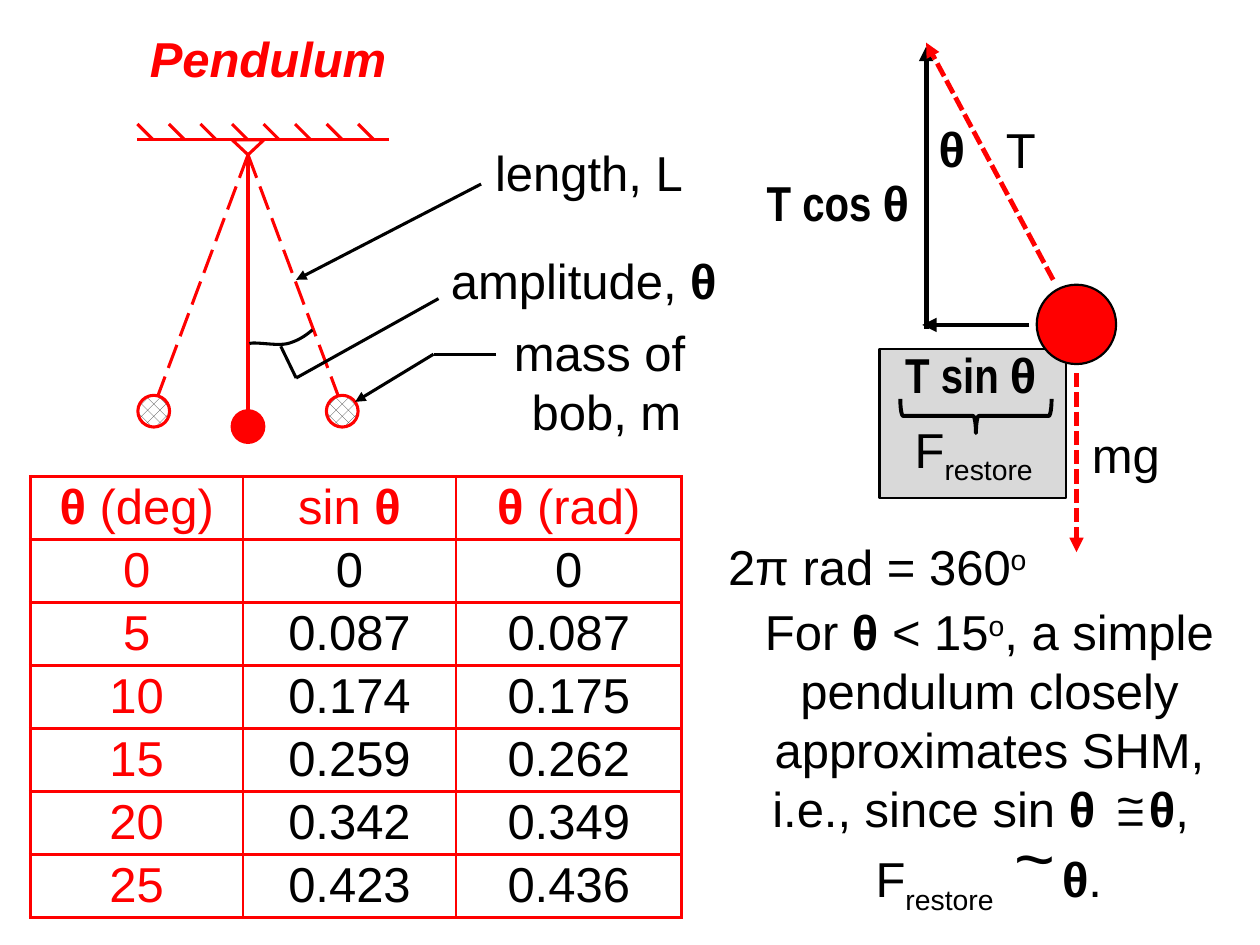
import pptx
import pptx.util
import pptx.dml.color
import pptx.enum.dml
import pptx.enum.shapes
import pptx.enum.text
import pptx.oxml
import pptx.oxml.ns

Cm, Pt = pptx.util.Cm, pptx.util.Pt
RGB = pptx.dml.color.RGBColor
SHAPE = pptx.enum.shapes.MSO_SHAPE
DASH = pptx.enum.dml.MSO_LINE
ALIGN = pptx.enum.text.PP_ALIGN
RED, BLACK, WHITE = RGB(255, 0, 0), RGB(0, 0, 0), RGB(255, 255, 255)
GREY, DARK = RGB(0xD9, 0xD9, 0xD9), RGB(0x33, 0x33, 0x33)
THIN, MEDIUM, THICK, BRACE = 1.75, 1.25, 2.75, 2.25
NS = pptx.oxml.ns.nsdecls("a")
THETA = ("θ", {"bold": True})
SUB, SUP = {"baseline": -25000}, {"baseline": 30000}
NARROW = {"bold": True, "name": "Arial Narrow"}


class Sketch:
    """Holds the text style and the slide being drawn, with lengths in centimetres."""

    def __init__(self, slide):
        self.slide = slide
        self.base = {"name": "Arial", "size": Pt(28), "bold": False}

    def add_runs(self, p, runs, color):
        for run in runs:
            text, extra = (run, {}) if isinstance(run, str) else run
            fmt = {**self.base, **extra}
            baseline = fmt.pop("baseline", None)
            r = p.add_run()
            r.text = text
            r.font.color.rgb = color
            for key, value in fmt.items():
                setattr(r.font, key, value)
            if baseline:
                r._r.get_or_add_rPr().set("baseline", str(baseline))

    def text(self, x, y, w, paras, h=1.45, color=BLACK, align=ALIGN.CENTER, wrap=False):
        sp = self.slide.shapes.add_textbox(Cm(x), Cm(y), Cm(w), Cm(h))
        tf = sp.text_frame
        tf.word_wrap = wrap
        tf.auto_size = pptx.enum.text.MSO_AUTO_SIZE.SHAPE_TO_FIT_TEXT
        for i, runs in enumerate(paras):
            p = tf.add_paragraph() if i else tf.paragraphs[0]
            p.alignment = align
            self.add_runs(p, runs, color)
        return tf

    def tabs(self, p, *stops):
        p.alignment = ALIGN.LEFT
        tabs = "".join(f'<a:tab pos="{Cm(s)}" algn="l"/>' for s in stops)
        p._p.get_or_add_pPr().append(pptx.oxml.parse_xml(f"<a:tabLst {NS}>{tabs}</a:tabLst>"))

    def line(self, x1, y1, x2, y2, color=BLACK, width=THIN, dash=None, arrow=False):
        sp = self.slide.shapes.add_connector(
            pptx.enum.shapes.MSO_CONNECTOR.STRAIGHT, Cm(x1), Cm(y1), Cm(x2), Cm(y2))
        values = {"width": Pt(width), "dash_style": dash}
        sp.line.color.rgb = color
        for key, value in values.items():
            setattr(sp.line, key, value)
        if arrow:
            sp.line._get_or_add_ln().append(
                pptx.oxml.parse_xml(f'<a:tailEnd {NS} type="triangle"/>'))
        sp._element.spPr.append(pptx.oxml.parse_xml(f"<a:effectLst {NS}/>"))

    def finish(self, sp, fill, color, width):
        sp.shadow.inherit = False
        sp.line.color.rgb = color
        sp.line.width = Pt(width)
        if fill is None:
            sp.fill.background()
        else:
            sp.fill.solid()
            sp.fill.fore_color.rgb = fill
        return sp

    def shape(self, kind, x, y, w, h, fill=None, color=RED, width=THIN, rotation=0):
        sp = self.slide.shapes.add_shape(kind, Cm(x), Cm(y), Cm(w), Cm(h))
        sp.rotation = rotation
        return self.finish(sp, fill, color, width)

    def circle(self, cx, cy, d, **style):
        return self.shape(SHAPE.OVAL, cx - d / 2, cy - d / 2, d, d, **style)

    def hatched(self, cx, cy, d):
        fill = self.circle(cx, cy, d).fill
        fill.patterned()
        fill.pattern = pptx.enum.dml.MSO_PATTERN.PERCENT_30
        fill.fore_color.rgb, fill.back_color.rgb = DARK, WHITE

    def curve(self, *beziers, steps=10):
        pts = [beziers[0][0]]
        for a, b, c, d in beziers:
            for t in (i / steps for i in range(1, steps + 1)):
                u = 1 - t
                pts.append([u**3 * m + 3 * u * u * t * n + 3 * u * t * t * o + t**3 * q
                            for m, n, o, q in zip(a, b, c, d)])
        pts = [(Cm(x), Cm(y)) for x, y in pts]
        fb = self.slide.shapes.build_freeform(*pts[0])
        fb.add_line_segments(pts[1:], close=False)
        self.finish(fb.convert_to_shape(), None, BLACK, THIN)

    def table(self, x, y, widths, row_height, rows):
        tbl = self.slide.shapes.add_table(
            len(rows), len(widths), Cm(x), Cm(y), Cm(sum(widths)), Cm(row_height * len(rows))).table
        for col, w in zip(tbl.columns, widths):
            col.width = Cm(w)
        values = {"margin_top": 0, "margin_bottom": 0,
                  "vertical_anchor": pptx.enum.text.MSO_ANCHOR.MIDDLE}
        for i, row in enumerate(rows):
            for j, runs in enumerate(row):
                cell = tbl.cell(i, j)
                for key, value in values.items():
                    setattr(cell, key, value)
                p = cell.text_frame.paragraphs[0]
                p.alignment = ALIGN.CENTER
                self.add_runs(p, runs, BLACK if i and j else RED)
                cell.fill.background()
                for k, side in enumerate("LRTB"):
                    cell._tc.get_or_add_tcPr().insert(k, pptx.oxml.parse_xml(
                        f'<a:ln{side} {NS} w="{Pt(THIN)}"><a:solidFill><a:srgbClr val="{RED}"/>'
                        f"</a:solidFill></a:ln{side}>"))


def draw_pendulum(s):
    s.text(2.74, 0.46, 5.33, [[("Pendulum", {"bold": True, "italic": True})]], color=RED)
    px, py, ceiling = 5, 3.12, 2.82
    s.line(2.77, ceiling, 7.85, ceiling, RED)
    s.shape(SHAPE.ISOSCELES_TRIANGLE, px - 0.32, ceiling, 0.64, 0.3, WHITE, rotation=180)
    s.line(px, py, px, 8.53, RED)
    s.circle(px, 8.6, 0.64, fill=RED)
    for dx in (1.9, -1.9):
        s.line(px, py, px + dx, 8.2, RED, dash=DASH.LONG_DASH)
        s.hatched(px + dx, 8.29, 0.64)
    for i in range(8):
        x = 2.77 + i * 4.45 / 7
        s.line(x + 0.32, ceiling, x, 2.5, RED)

    s.text(10.08, 6.38, 4.29, [["mass of "], ["bob, m"]], h=2.64)
    s.line(10, 7.14, 8.74, 7.14)
    s.line(8.74, 7.14, 7.16, 8.1, arrow=True)
    s.text(9.73, 2.74, 4.34, [["length, L"]], align=ALIGN.LEFT)
    s.line(9.7, 3.71, 5.97, 5.64, arrow=True)
    s.text(8.84, 4.93, 6.45, [["amplitude, ", THETA]], align=ALIGN.LEFT, wrap=True)
    s.curve([(6.3, 6.65), (6.15, 6.78), (5.99, 6.88), (5.79, 6.93)],
            [(5.79, 6.93), (5.56, 6.98), (5.11, 6.88), (5.03, 6.93)])
    s.line(5.66, 6.98, 5.97, 7.62)
    s.line(5.97, 7.62, 8.84, 6.02)


def draw_forces(s):
    s.line(18.67, 6.63, 18.67, 0.94, width=THICK, arrow=True)
    s.shape(SHAPE.RECTANGLE, 17.73, 7.04, 3.76, 3, GREY, BLACK, MEDIUM)
    s.circle(21.7, 6.54, 1.6, fill=RED, color=BLACK, width=MEDIUM)
    s.line(21.7, 7.52, 21.7, 11.13, RED, THICK, DASH.SQUARE_DOT, True)
    s.line(21.23, 5.64, 18.67, 0.86, RED, THICK, DASH.SQUARE_DOT, True)
    s.line(20.75, 6.55, 18.59, 6.55, width=THICK, arrow=True)
    s.shape(SHAPE.LEFT_BRACE, 19.33, 6.86, 0.69, 3.05, None, BLACK, BRACE, 270)
    for x, y, w, runs in (
            (21.74, 8.43, 1.91, ["mg"]),
            (20.02, 2.29, 1.12, ["T"]),
            (18.67, 2.26, 1.04, [THETA]),
            (17.98, 6.83, 3.18, [("T sin ", NARROW), THETA]),
            (15.19, 3.35, 3.4, [("T cos ", NARROW), THETA]),
            (18.03, 8.33, 3.2, ["F", ("restore", SUB)])):
        s.text(x, y, w, [runs])


def draw_conclusion(s):
    s.text(14.33, 10.69, 6.71, [["2π rad = 360", ("o", SUP)]])
    tf = s.text(14.99, 12.01, 9.91, [
        ["For ", THETA, " < 15", ("o", SUP), ", a simple"],
        ["pendulum closely"],
        ["approximates SHM,"],
        ["\ti.e., since sin ", THETA, "\t", THETA, ","]], h=5.05, wrap=True)
    s.tabs(tf.paragraphs[-1], 0.33, 7.92)
    s.text(22.23, 15.37, 1.12, [["~"]])
    s.text(22.25, 15.72, 1.09, [["="]])
    tf = s.text(17.4, 16.99, 5.61, [["F", ("restore", SUB), "\t", THETA, "."]], wrap=True)
    s.tabs(tf.paragraphs[0], 3.76)
    s.text(20.19, 16.28, 1.35, [[("~", {"size": Pt(40)})]], h=1.96)


def main():
    prs = pptx.Presentation()
    prs.slide_width, prs.slide_height = Cm(25.4), Cm(19.05)
    s = Sketch(prs.slides.add_slide(prs.slide_layouts[6]))
    draw_pendulum(s)
    values = [("0", "0", "0"), ("5", "0.087", "0.087"), ("10", "0.174", "0.175"),
              ("15", "0.259", "0.262"), ("20", "0.342", "0.349"), ("25", "0.423", "0.436")]
    head = [[THETA, " (deg)"], ["sin ", THETA], [THETA, " (rad)"]]
    s.table(0.61, 9.6, (4.29, 4.29, 4.55), 1.27, [head] + [[[v] for v in row] for row in values])
    draw_forces(s)
    draw_conclusion(s)
    prs.save("out.pptx")


if __name__ == "__main__":
    main()
